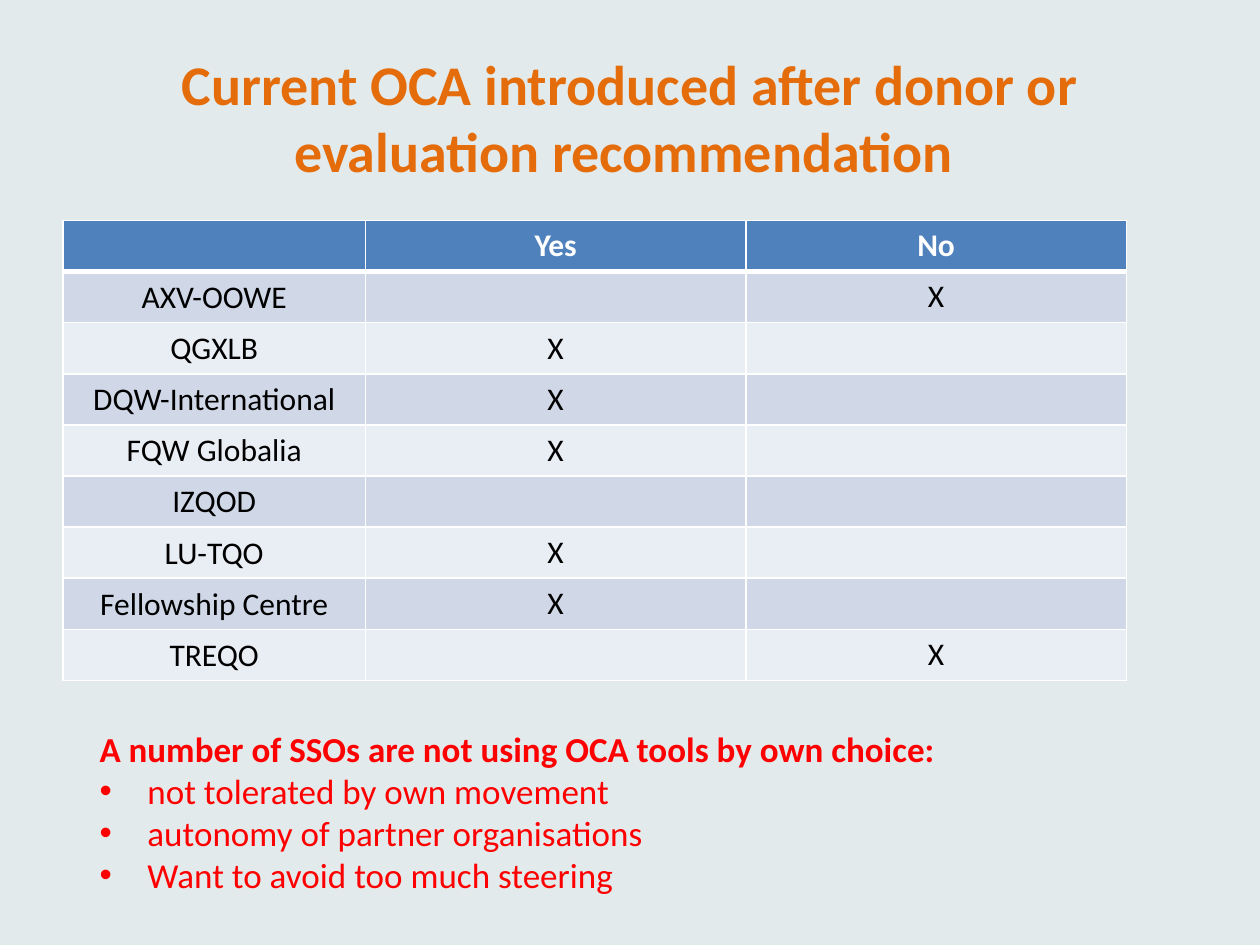
import dataclasses

import lxml.etree
import pptx
import pptx.dml.color
import pptx.enum.text
import pptx.oxml.ns
import pptx.util

Inches = pptx.util.Inches
Pt = pptx.util.Pt
qn = pptx.oxml.ns.qn
ALIGN = pptx.enum.text.PP_ALIGN
ANCHOR = pptx.enum.text.MSO_ANCHOR

FONT = "Calibri"
COLORS = {
    "background": "E3EAEB",
    "title": "E46C0A",
    "header": "4F81BD",
    "odd_row": "D0D8E8",
    "even_row": "E9EDF4",
    "white": "FFFFFF",
    "black": "000000",
    "note": "FF0000",
}


@dataclasses.dataclass(frozen=True)
class TextStyle:
    size: int
    color: str
    bold: bool = False


@dataclasses.dataclass(frozen=True)
class Answer:
    organisation: str
    yes: str = ""
    no: str = ""


TITLE_STYLE = TextStyle(32, "title", True)
HEADER_STYLE = TextStyle(18, "white", True)
CELL_STYLE = TextStyle(18, "black")
NOTE_HEADING_STYLE = TextStyle(20, "note", True)
NOTE_STYLE = TextStyle(20, "note")

# Content
ANSWERS = [
    Answer("AXV-OOWE", no="X"),
    Answer("QGXLB", yes="X"),
    Answer("DQW-International", yes="X"),
    Answer("FQW Globalia", yes="X"),
    Answer("IZQOD", yes=""),
    Answer("LU-TQO", yes="X"),
    Answer("Fellowship Centre", yes="X"),
    Answer("TREQO", no="X"),
]
COLUMN_WIDTHS = [2.4, 3.02, 3.02]
TABLE_HEIGHT = 3.65
ROW_HEIGHT = TABLE_HEIGHT / (len(ANSWERS) + 1)
REASONS = [
    "not tolerated by own movement",
    "autonomy of partner organisations",
    "Want to avoid too much steering",
]


# Text and cell helpers
def rgb(name: str) -> pptx.dml.color.RGBColor:
    return pptx.dml.color.RGBColor.from_string(COLORS[name])


def add_run(paragraph, text: str, style: TextStyle) -> None:
    run = paragraph.add_run()
    run.text = text
    run.font.name = FONT
    run.font.size = Pt(style.size)
    run.font.bold = style.bold
    run.font.color.rgb = rgb(style.color)


def place(shape, left: float, top: float, width: float, height: float) -> None:
    shape.left, shape.top = Inches(left), Inches(top)
    shape.width, shape.height = Inches(width), Inches(height)


def set_borders(cell, top: int, bottom: int) -> None:
    properties = cell._tc.get_or_add_tcPr()
    for side, width in (("L", 1), ("R", 1), ("T", top), ("B", bottom)):
        line = lxml.etree.SubElement(properties, qn(f"a:ln{side}"), w=str(Pt(width)))
        fill = lxml.etree.SubElement(line, qn("a:solidFill"))
        lxml.etree.SubElement(fill, qn("a:srgbClr"), val=COLORS["white"])


def fill_cell(cell, text: str, style: TextStyle, fill: str, top: int, bottom: int) -> None:
    set_borders(cell, top, bottom)
    cell.fill.solid()
    cell.fill.fore_color.rgb = rgb(fill)
    paragraph = cell.text_frame.paragraphs[0]
    paragraph.alignment = ALIGN.CENTER
    if text:
        add_run(paragraph, text, style)


def set_bullet(paragraph, character: str = "") -> None:
    properties = paragraph._p.get_or_add_pPr()
    indent = Inches(0.38) if character else 0
    properties.set("marL", str(indent))
    properties.set("indent", str(-indent))
    if character:
        lxml.etree.SubElement(properties, qn("a:buFont"), typeface="Arial")
        lxml.etree.SubElement(properties, qn("a:buChar"), char=character)
    else:
        lxml.etree.SubElement(properties, qn("a:buNone"))


# Title
def add_title(slide) -> None:
    title = slide.shapes.title
    place(title, 0.5, 0.3, 9, 1.25)
    frame = title.text_frame
    frame.vertical_anchor = ANCHOR.MIDDLE
    frame.auto_size = pptx.enum.text.MSO_AUTO_SIZE.NONE
    frame.paragraphs[0].alignment = ALIGN.CENTER
    text = "Current OCA introduced after donor or evaluation recommendation "
    add_run(frame.paragraphs[0], text, TITLE_STYLE)


# Table of answers per organisation
def add_answer_table(slide) -> None:
    table = slide.shapes.add_table(
        len(ANSWERS) + 1, len(COLUMN_WIDTHS), Inches(0.5), Inches(1.75),
        Inches(sum(COLUMN_WIDTHS)), Inches(TABLE_HEIGHT),
    ).table
    for column, width in zip(table.columns, COLUMN_WIDTHS):
        column.width = Inches(width)
    for row in table.rows:
        row.height = Inches(ROW_HEIGHT)

    for column, heading in enumerate(("", "Yes", "No")):
        fill_cell(table.cell(0, column), heading, HEADER_STYLE, "header", 1, 3)

    for row, answer in enumerate(ANSWERS, start=1):
        fill = "odd_row" if row % 2 else "even_row"
        top = 3 if row == 1 else 1
        for column, text in enumerate(dataclasses.astuple(answer)):
            fill_cell(table.cell(row, column), text, CELL_STYLE, fill, top, 1)
        name_cell = table.cell(row, 0)
        name_cell.vertical_anchor = ANCHOR.MIDDLE
        name_cell.margin_left = name_cell.margin_right = Inches(0.01)
        name_cell.margin_top, name_cell.margin_bottom = Inches(0.01), 0


# Note with reasons
def add_note(slide) -> None:
    body = slide.placeholders[1]
    place(body, 0.69, 5.72, 8.27, 1.78)
    frame = body.text_frame
    frame.auto_size = pptx.enum.text.MSO_AUTO_SIZE.NONE
    heading = frame.paragraphs[0]
    heading.space_before = Pt(0)
    set_bullet(heading)
    add_run(heading, "A number of SSOs are not using OCA tools by own choice:", NOTE_HEADING_STYLE)
    for reason in REASONS:
        paragraph = frame.add_paragraph()
        paragraph.space_before = Pt(0)
        set_bullet(paragraph, "•")
        add_run(paragraph, reason, NOTE_STYLE)


def main() -> None:
    presentation = pptx.Presentation()
    presentation.slide_width, presentation.slide_height = Inches(10), Inches(7.5)
    slide = presentation.slides.add_slide(presentation.slide_layouts[1])
    slide.background.fill.solid()
    slide.background.fill.fore_color.rgb = rgb("background")

    add_title(slide)
    add_answer_table(slide)
    add_note(slide)
    presentation.save("out.pptx")


if __name__ == "__main__":
    main()
